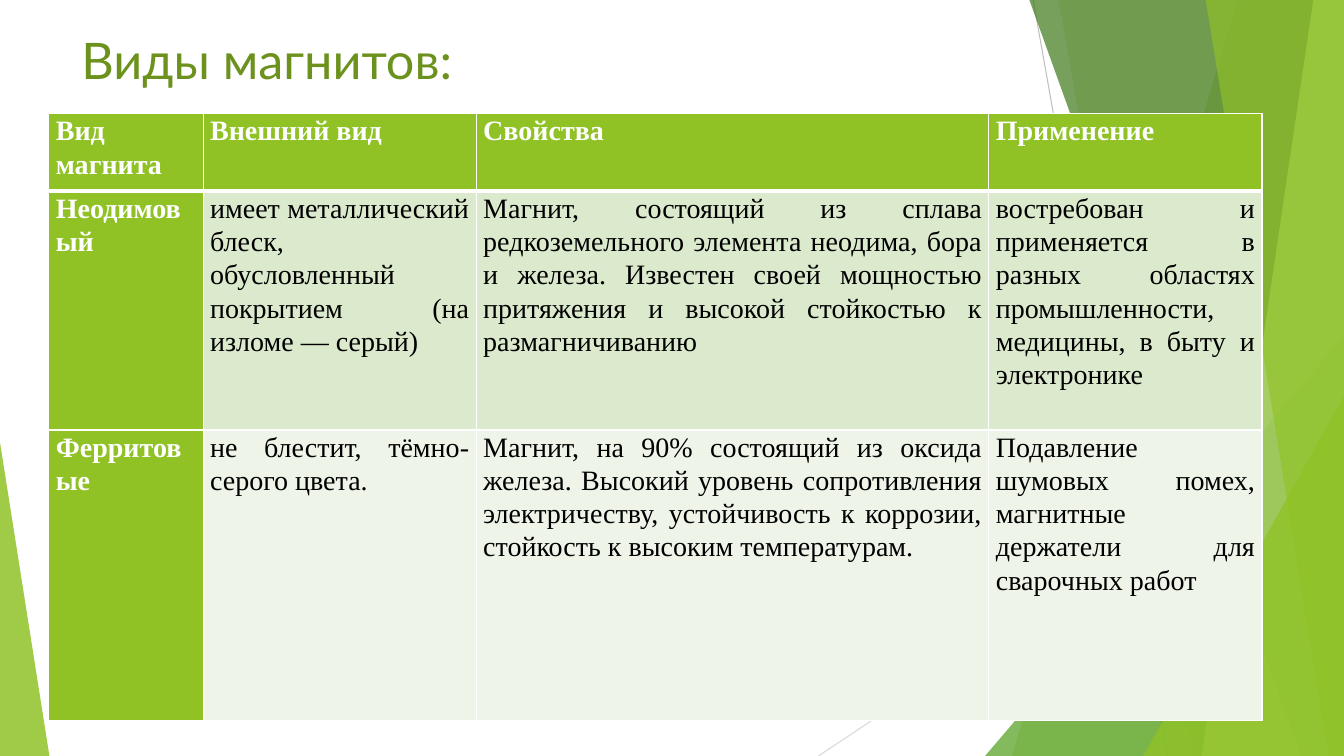
from lxml import etree
from pptx import Presentation
from pptx import util as u
from pptx.dml import color
from pptx.enum import shapes, text
from pptx.oxml import ns

Pt, RGB = u.Pt, color.RGBColor
W, H = 960, 540
TOP = -0.6

WHITE = RGB(0xFF, 0xFF, 0xFF)
BLACK = RGB(0, 0, 0)
GREEN = RGB(0x90, 0xC2, 0x26)
MID_GREEN = RGB(0x54, 0xA0, 0x21)
DARK_GREEN = RGB(0x3F, 0x78, 0x19)
LIME = RGB(0xC0, 0xE4, 0x74)
TITLE_GREEN = RGB(0x6C, 0x92, 0x1D)
ROW_FILLS = [RGB(0xDB, 0xE9, 0xCD), RGB(0xEE, 0xF4, 0xE8)]
GRAY = RGB(0xBF, 0xBF, 0xBF)
LIGHT_GRAY = RGB(0xD9, 0xD9, 0xD9)

COLS = [110.2, 195.1, 366.2, 195.1]
ROWS = [55.4, 170.6, 207.4]
MAGNETS = [
    ["Вид магнита", "Внешний вид", "Свойства", "Применение"],
    ["Неодимовый",
     "имеет металлический блеск, обусловленный покрытием (на изломе — серый)",
     "Магнит, состоящий из сплава редкоземельного элемента неодима, бора и железа. "
     "Известен своей мощностью притяжения и высокой стойкостью к размагничиванию",
     "востребован и применяется в разных областях промышленности, медицины, "
     "в быту и электронике"],
    ["Ферритовые",
     "не блестит, тёмно-серого цвета.",
     "Магнит, на 90% состоящий из оксида железа. Высокий уровень сопротивления "
     "электричеству, устойчивость к коррозии, стойкость к высоким температурам.",
     "Подавление шумовых помех, магнитные держатели для сварочных работ"],
]


def add_line(s, x1, y1, x2, y2, rgb):
    ln = s.shapes.add_connector(shapes.MSO_CONNECTOR.STRAIGHT,
                                Pt(x1), Pt(y1), Pt(x2), Pt(y2))
    ln.line.color.rgb = rgb
    ln.line.width = Pt(0.75)
    etree.SubElement(ln._element.spPr, ns.qn("a:effectLst"))


def paint(sp, rgb, opacity):
    sp.shadow.inherit = False
    sp.line.fill.background()
    sp.fill.solid()
    sp.fill.fore_color.rgb = rgb
    clr = sp._element.spPr.find(".//" + ns.qn("a:srgbClr"))
    etree.SubElement(clr, ns.qn("a:alpha"), val=str(opacity * 1000))


def add_band(s, top_x, bottom_x, rgb, opacity):
    """Band from a slanted left edge to the right side of the slide."""
    fb = s.shapes.build_freeform(Pt(top_x), Pt(TOP), scale=1.0)
    fb.add_line_segments([(Pt(x), Pt(y)) for x, y in
                          [(W, TOP), (W, H), (bottom_x, H)]], close=True)
    paint(fb.convert_to_shape(), rgb, opacity)


def add_triangle(s, x, y, w, apex, rgb, opacity):
    """Triangle standing on the bottom edge of the slide."""
    sp = s.shapes.add_shape(shapes.MSO_SHAPE.ISOSCELES_TRIANGLE,
                            Pt(x), Pt(y), Pt(w), Pt(H - y))
    sp.adjustments[0] = apex
    paint(sp, rgb, opacity)


def style_run(r, font, size, rgb, bold=False):
    r.font.name = font
    r.font.size = Pt(size)
    r.font.bold = bold
    r.font.color.rgb = rgb


def add_title(s, words):
    tf = s.shapes.add_textbox(Pt(51.1), Pt(0), Pt(292.3), Pt(67.7)).text_frame
    tf.word_wrap = True
    tf.vertical_anchor = text.MSO_ANCHOR.BOTTOM
    tf.text = words
    style_run(tf.paragraphs[0].runs[0], "Lato", 36, TITLE_GREEN)


def add_borders(cell, widths):
    tcPr = cell._tc.get_or_add_tcPr()
    for side in "LRTB":
        ln = etree.SubElement(tcPr, ns.qn("a:ln" + side),
                              w=str(Pt(widths.get(side, 1))))
        fill = etree.SubElement(ln, ns.qn("a:solidFill"))
        etree.SubElement(fill, ns.qn("a:srgbClr"), val=str(WHITE))


def fill_cell(cell, words, fill, rgb, bold, widths):
    cell.margin_left = cell.margin_right = Pt(5)
    cell.margin_top = cell.margin_bottom = 0
    add_borders(cell, widths)
    cell.fill.solid()
    cell.fill.fore_color.rgb = fill
    p = cell.text_frame.paragraphs[0]
    p.text = words
    p.alignment = text.PP_ALIGN.JUSTIFY
    p.line_spacing = 1.07
    p.space_after = Pt(8)
    style_run(p.runs[0], "Times New Roman", 20, rgb, bold)


def add_magnet_table(s):
    tbl = s.shapes.add_table(len(ROWS), len(COLS), Pt(34.9), Pt(81.2),
                             Pt(sum(COLS)), Pt(sum(ROWS))).table
    tbl.first_col = True
    for col, w in zip(tbl.columns, COLS):
        col.width = Pt(w)
    for i, (h, row) in enumerate(zip(ROWS, MAGNETS)):
        tbl.rows[i].height = Pt(h)
        widths = [{"B": 3}, {"T": 3}, {}][i]
        for j, words in enumerate(row):
            head = i == 0 or j == 0
            fill = GREEN if head else ROW_FILLS[i - 1]
            fill_cell(tbl.cell(i, j), words, fill,
                      WHITE if head else BLACK, head, widths)


def main():
    prs = Presentation()
    prs.slide_width, prs.slide_height = Pt(W), Pt(H)
    s = prs.slides.add_slide(prs.slide_layouts[6])

    # Background facets, back to front
    add_line(s, 738, 0, 834, H, GRAY)
    add_line(s, W, 290, 584.6, H, LIGHT_GRAY)
    add_band(s, 884.2, 722.9, GREEN, 30)
    add_band(s, 756, 851.8, GREEN, 20)
    add_triangle(s, 703.6, 240, 256.4, 1, MID_GREEN, 72)
    add_band(s, 735.1, 929.5, DARK_GREEN, 70)
    add_band(s, 938.2, 858.2, LIME, 70)
    add_band(s, 861.1, 949, GREEN, 65)
    add_triangle(s, 816.6, 283, 143.4, 1, GREEN, 80)
    add_triangle(s, 0, 316, 35.3, 0, GREEN, 85)

    # Title and table
    add_title(s, "Виды магнитов:")
    add_magnet_table(s)

    prs.save("out.pptx")


if __name__ == "__main__":
    main()
